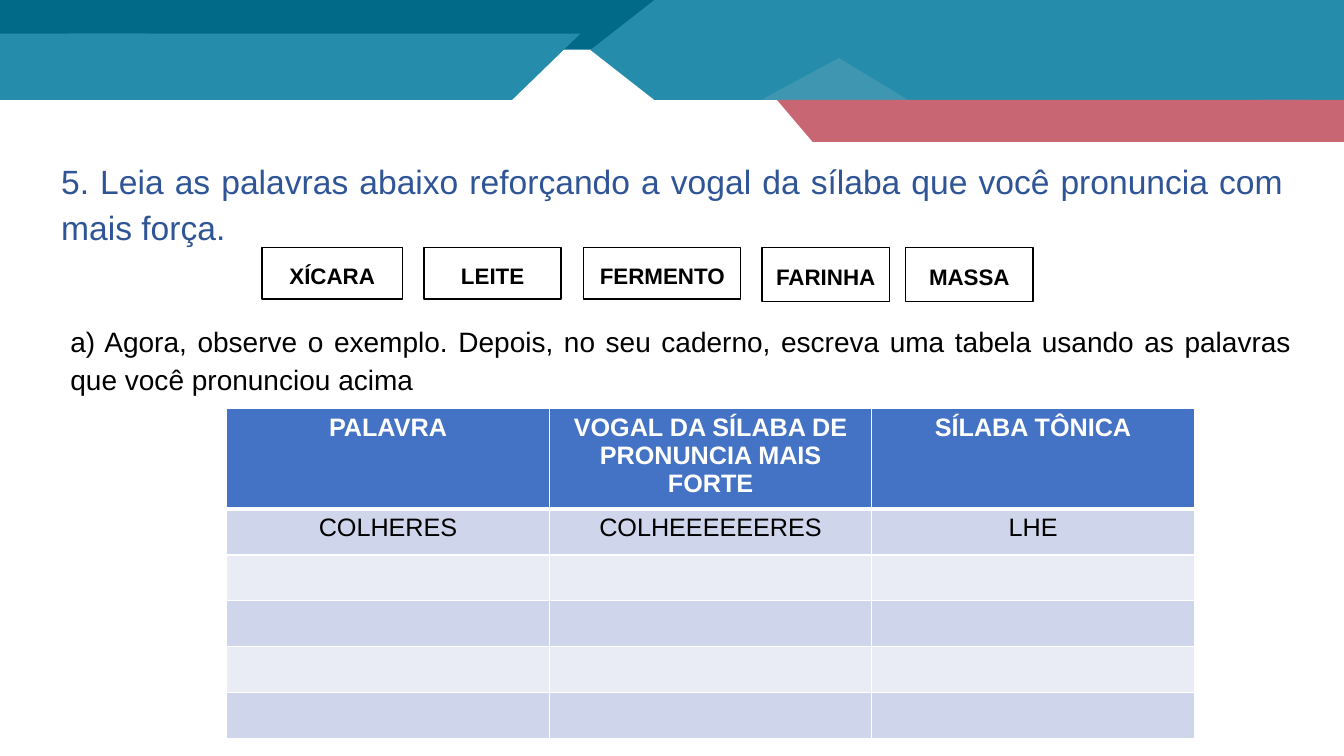
from dataclasses import dataclass

from lxml.etree import SubElement
from pptx import Presentation
from pptx.dml.color import RGBColor
from pptx.enum.shapes import MSO_SHAPE
from pptx.enum.text import MSO_ANCHOR, MSO_AUTO_SIZE, PP_ALIGN
from pptx.oxml.ns import qn
from pptx.util import Inches, Pt

WIDE, HIGH = Inches(13.333), Inches(7.5)
COLS, ROWS = 160, 90
FONT = "Arial"
BLACK, WHITE = "000000", "FFFFFF"
DARK, TEAL, PALE, ROSE = "006A88", "258DAB", "3F96B0", "C86673"
HEAD, ODD, EVEN = "4472C4", "CFD5EA", "E9EBF5"
SLANT = MSO_SHAPE.PARALLELOGRAM
RECT = MSO_SHAPE.RECTANGLE


@dataclass
class Area:
    """A place on the grid, in columns and rows."""
    col: float
    row: float
    wide: float
    high: float


@dataclass
class Band:
    """One flat shape of the banner."""
    kind: MSO_SHAPE
    area: Area
    fill: str
    adj: float | None = None
    flip: bool = False


@dataclass
class Word:
    """A boxed word of the exercise."""
    text: str
    col: float
    wide: float
    high: float


@dataclass
class Note:
    """A justified block of text."""
    text: str
    area: Area
    size: int
    tint: str


BANDS = [
    Band(SLANT, Area(0, 0, 86.4, 5.9), DARK, 1.03),
    Band(RECT, Area(0, 0, 17.9, 5.9), DARK),
    Band(SLANT, Area(0, 4, 69.1, 7.9), TEAL, 1.03),
    Band(RECT, Area(0, 4, 17.9, 7.9), TEAL),
    Band(MSO_SHAPE.PENTAGON, Area(70.3, 0, 89.7, 11.9), TEAL, 0.64, True),
    Band(MSO_SHAPE.ISOSCELES_TRIANGLE, Area(90.6, 6.9, 17.5, 5), PALE, 0.53),
    Band(SLANT, Area(92.5, 11.9, 67.5, 5), ROSE, 0.85, True),
    Band(RECT, Area(150, 11.9, 10, 5), ROSE),
]
WORDS = [
    Word("XÍCARA", 31.2, 16.7, 6.1),
    Word("LEITE", 50.5, 16.3, 6.1),
    Word("FERMENTO", 69.5, 18.7, 6.1),
    Word("FARINHA", 90.7, 15.2, 6.4),
    Word("MASSA", 107.8, 15.2, 6.4),
]
NOTES = [
    Note("5. Leia as palavras abaixo reforçando a vogal da sílaba que você "
         "pronuncia com mais força.", Area(6.1, 17.8, 147.8, 12), 24, "2F5597"),
    Note("a) Agora, observe o exemplo. Depois, no seu caderno, escreva uma tabela "
         "usando as palavras que você pronunciou acima",
         Area(7.2, 37.4, 147.8, 10.6), 20, BLACK),
]
GRID = [
    ["PALAVRA", "VOGAL DA SÍLABA DE PRONUNCIA MAIS FORTE", "SÍLABA TÔNICA"],
    ["COLHERES", "COLHEEEEEERES", "LHE"],
] + [[""] * 3] * 4
TOP, STEP = 11.88, 5.46


def tone(code: str) -> RGBColor:
    """Turn a hex string into a colour."""
    return RGBColor.from_string(code)


def across(cols: float) -> int:
    """Measure a number of grid columns."""
    return round(WIDE * cols / COLS)


def down(rows: float) -> int:
    """Measure a number of grid rows."""
    return round(HIGH * rows / ROWS)


def place(area: Area) -> tuple[int, int, int, int]:
    """Give left, top, width and height of an area."""
    return across(area.col), down(area.row), across(area.wide), down(area.high)


def style(para, size: int, tint: str, bold: bool, align: PP_ALIGN) -> None:
    """Format a paragraph and its runs."""
    para.alignment = align
    for font in [para.font] + [run.font for run in para.runs]:
        font.name, font.size, font.bold = FONT, Pt(size), bold
        font.color.rgb = tone(tint)


def block(shapes, kind: MSO_SHAPE, area: Area, fill: str):
    """Add a flat shape without a line."""
    shape = shapes.add_shape(kind, *place(area))
    shape.shadow.inherit = False
    shape.fill.solid()
    shape.fill.fore_color.rgb = tone(fill)
    shape.line.fill.background()
    return shape


def draw_band(shapes, band: Band) -> None:
    """Draw one part of the banner."""
    shape = block(shapes, band.kind, band.area, band.fill)
    if band.adj is not None:
        shape.adjustments[0] = band.adj
    if band.flip:
        shape._element.spPr.find(qn("a:xfrm")).set("flipH", "1")


def draw_word(shapes, word: Word) -> None:
    """Draw one boxed word."""
    shape = block(shapes, RECT, Area(word.col, 29.5, word.wide, word.high), WHITE)
    shape.line.color.rgb = tone(BLACK)
    shape.line.width = Pt(1)
    frame = shape.text_frame
    frame.text = word.text
    frame.vertical_anchor = MSO_ANCHOR.MIDDLE
    para = frame.paragraphs[0]
    para.line_spacing, para.space_after = 1.15, Pt(10)
    style(para, 16, BLACK, True, PP_ALIGN.CENTER)


def draw_note(shapes, note: Note) -> None:
    """Draw one justified text."""
    frame = shapes.add_textbox(*place(note.area)).text_frame
    frame.word_wrap = True
    frame.auto_size = MSO_AUTO_SIZE.SHAPE_TO_FIT_TEXT
    frame.text = note.text
    para = frame.paragraphs[0]
    para.line_spacing = 1.15
    style(para, note.size, note.tint, False, PP_ALIGN.JUSTIFY)


def edge(cell, side: str, width: float) -> None:
    """Give a cell a white border on one side."""
    line = SubElement(cell._tc.get_or_add_tcPr(), qn(f"a:{side}"), w=str(Pt(width)))
    fill = SubElement(line, qn("a:solidFill"))
    SubElement(fill, qn("a:srgbClr"), val=WHITE)


def draw_table(shapes) -> None:
    """Draw the answer table."""
    lines = len(GRID)
    area = Area(27, 48.6, 115.2, TOP + STEP * (lines - 1))
    table = shapes.add_table(lines, len(GRID[0]), *place(area)).table
    for row, texts in enumerate(GRID):
        table.rows[row].height = down(STEP if row else TOP)
        fill = HEAD if row == 0 else ODD if row % 2 else EVEN
        for col, text in enumerate(texts):
            cell = table.cell(row, col)
            cell.text = text
            style(cell.text_frame.paragraphs[0], 18, BLACK if row else WHITE,
                  row == 0, PP_ALIGN.CENTER)
            for side in ("lnL", "lnR", "lnT", "lnB"):
                thick = (row, side) in ((0, "lnB"), (1, "lnT"))
                edge(cell, side, 3 if thick else 1)
            cell.fill.solid()
            cell.fill.fore_color.rgb = tone(fill)


def main() -> None:
    """Build and save the slide."""
    deck = Presentation()
    deck.slide_width, deck.slide_height = WIDE, HIGH
    shapes = deck.slides.add_slide(deck.slide_layouts[6]).shapes
    for band in BANDS:
        draw_band(shapes, band)
    for note in NOTES:
        draw_note(shapes, note)
    for word in WORDS:
        draw_word(shapes, word)
    draw_table(shapes)
    deck.save("out.pptx")


if __name__ == "__main__":
    main()
